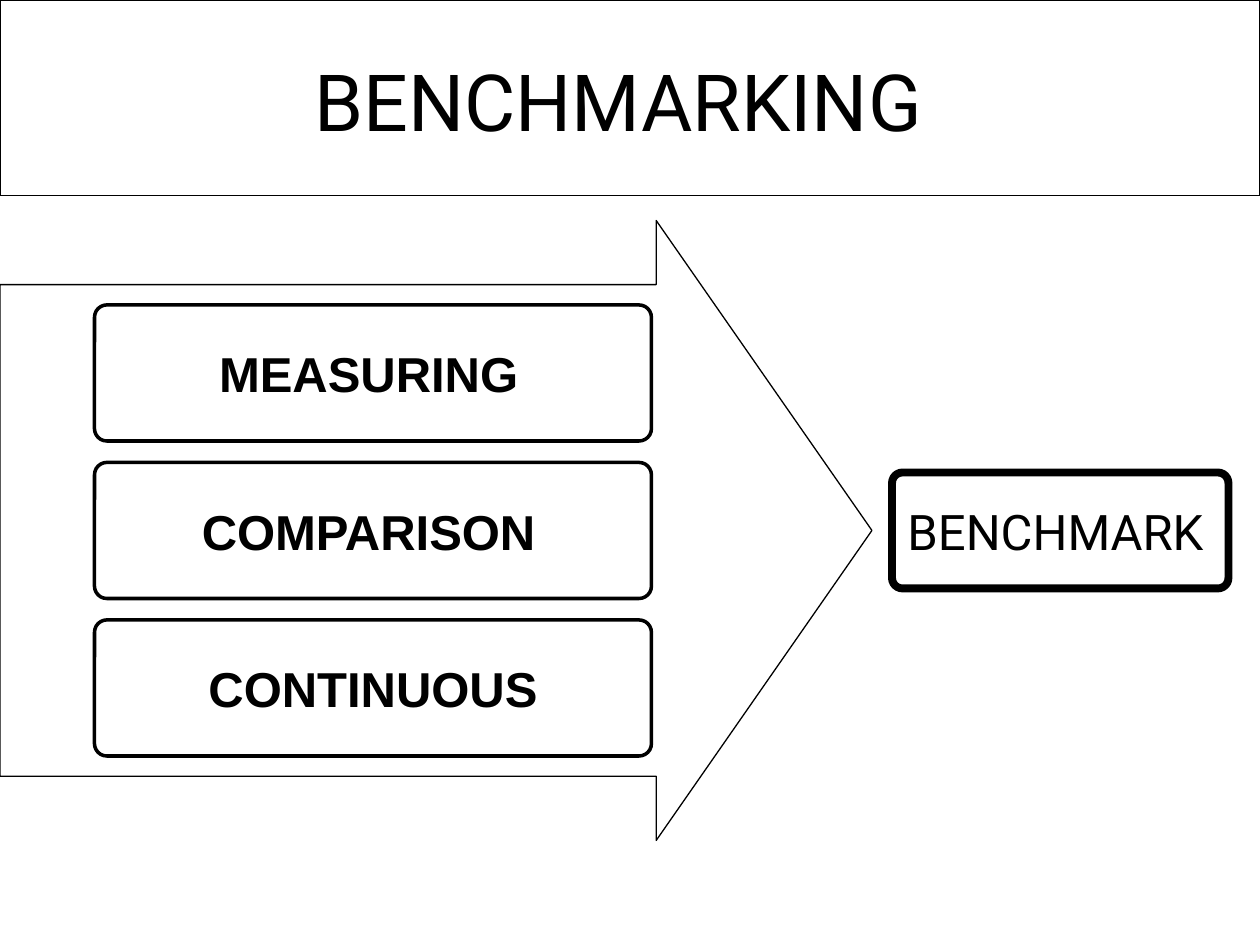
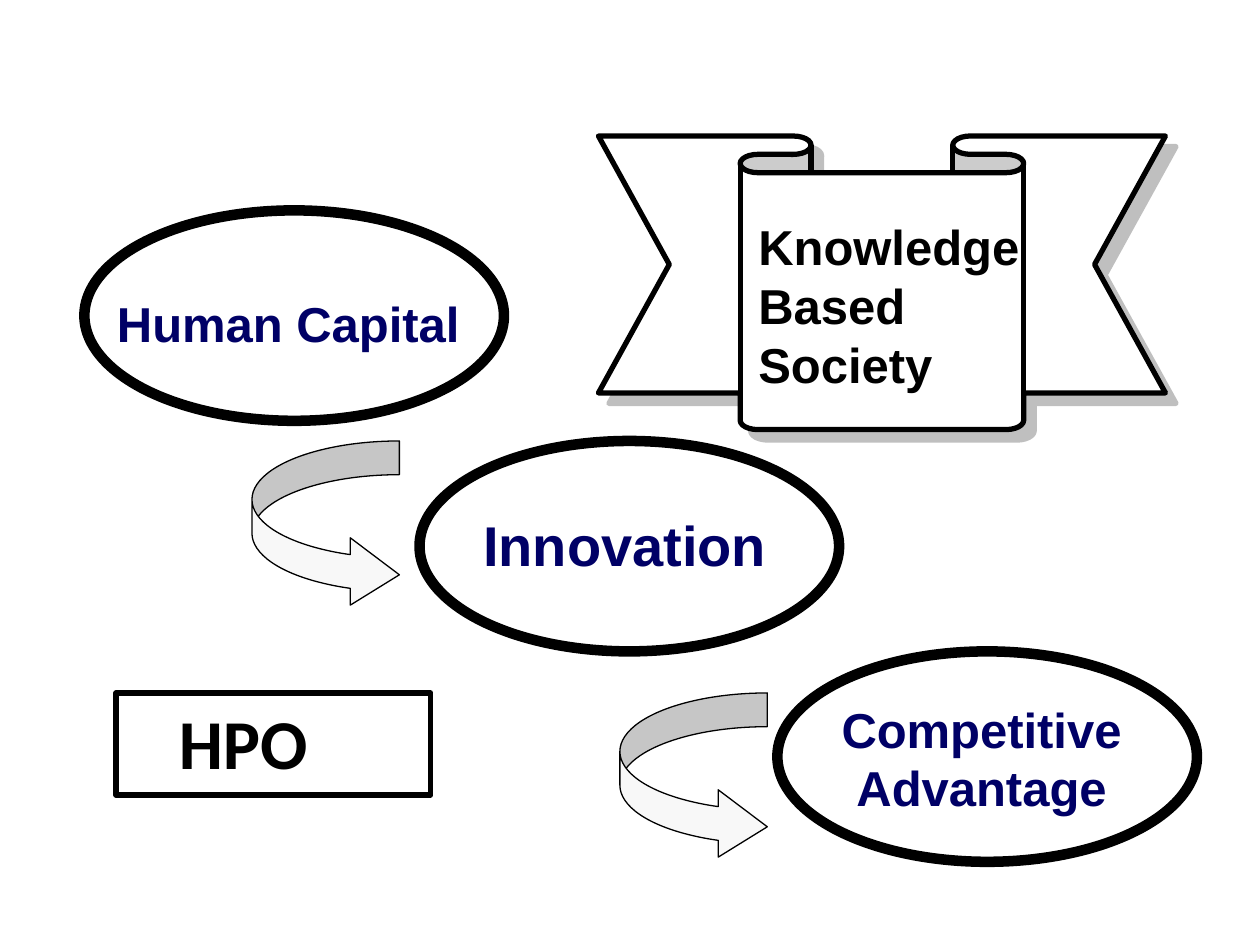
import dataclasses

import lxml.etree
import pptx
import pptx.dml.color
import pptx.enum.shapes
import pptx.enum.text
import pptx.oxml.ns
import pptx.util

Inches = pptx.util.Inches
Pt = pptx.util.Pt
Kind = pptx.enum.shapes.MSO_SHAPE
Align = pptx.enum.text.PP_ALIGN
Anchor = pptx.enum.text.MSO_ANCHOR

BLACK, WHITE, NAVY = "000000", "FFFFFF", "000066"
PALE, GREY = "F8F8F8", "808080"
FONT, TITLE_FONT, HPO_FONT = "Arial", "Roboto", "Calibri"
ROUND = (0.091,)
CURVE = (0.229, 0.457, 0.333)
OVAL = (3.33, 1.67)


@dataclasses.dataclass
class Box:
    left: float
    top: float
    width: float
    height: float

    def place(self) -> tuple:
        return tuple(Inches(v) for v in (self.left, self.top, self.width, self.height))


@dataclasses.dataclass
class Stage:
    """An oval with its label box."""
    left: float
    top: float
    text: str
    label: Box
    size: int = 28
    tail: int = 0
    align: Align = Align.CENTER


STAGES = [
    Stage(0.67, 1.67, "Human Capital", Box(0.83, 2, 3.42, 0.9), tail=48, align=Align.LEFT),
    Stage(3.33, 3.5, "Innovation", Box(3.67, 4, 2.58, 0.63), size=32),
    Stage(6.17, 5.17, "Competitive Advantage", Box(6.5, 5.5, 2.58, 1.03)),
]


def color(value: str) -> pptx.dml.color.RGBColor:
    return pptx.dml.color.RGBColor.from_string(value)


def paint(shape, fill: str = WHITE, width: float = 0.75) -> None:
    shape.fill.solid()
    shape.fill.fore_color.rgb = color(fill)
    shape.line.color.rgb = color(BLACK)
    shape.line.width = Pt(width)


def draw(slide, kind: Kind, box: Box, fill: str = WHITE, width: float = 0.75, adj: tuple = ()):
    shape = slide.shapes.add_shape(kind, *box.place())
    shape.shadow.inherit = False
    paint(shape, fill, width)
    for i, value in enumerate(adj):
        shape.adjustments[i] = value
    return shape


def write(shape, text: str, size: int = 28, font: str = FONT, ink: str = BLACK,
          bold: bool = True, align: Align = Align.LEFT, anchor: Anchor = Anchor.TOP,
          wrap: bool = True, tail: int = 0, lead: bool = True) -> None:
    """Fill a shape with one paragraph; tail is the size of a closing space."""
    frame = shape.text_frame
    frame.word_wrap = wrap
    frame.vertical_anchor = anchor
    para = frame.paragraphs[0]
    para.alignment = align
    if lead:
        para.space_before = Pt(max(size, tail) / 10)
    parts = [(text, size, font)] + ([(" ", tail, FONT)] if tail else [])
    for words, points, face in parts:
        run = para.add_run()
        run.text = words
        run.font.size = Pt(points)
        run.font.name = face
        run.font.bold = bold
        run.font.color.rgb = color(ink)


def label(slide, box: Box, text: str, **style) -> None:
    write(slide.shapes.add_textbox(*box.place()), text, **style)


def shade(shape, tint: str, alpha: int, dist: float, angle: int) -> None:
    qn = pptx.oxml.ns.qn
    effects = shape.element.spPr.find(qn("a:effectLst"))
    outer = lxml.etree.SubElement(effects, qn("a:outerShdw"), dist=str(Pt(dist)),
                                  dir=str(angle * 60000), algn="ctr", rotWithShape="0")
    tone = lxml.etree.SubElement(outer, qn("a:srgbClr"), val=tint)
    lxml.etree.SubElement(tone, qn("a:alpha"), val=str(alpha * 1000))


def bench(deck) -> None:
    slide = deck.slides.add_slide(deck.slide_layouts[5])
    title = slide.shapes.title
    title.left, title.top, title.width, title.height = Box(0, 0, 10, 1.55).place()
    paint(title)
    write(title, "BENCHMARKING", size=45, font=TITLE_FONT, bold=False, align=Align.CENTER,
          anchor=Anchor.MIDDLE, tail=48, lead=False)

    draw(slide, Kind.RIGHT_ARROW, Box(0, 1.75, 6.92, 4.92), adj=(0.793, 0.348))
    steps = [("MEASURING", 18), ("COMPARISON", 18), ("CONTINUOUS", 0)]
    for i, (text, tail) in enumerate(steps):
        step = draw(slide, Kind.ROUNDED_RECTANGLE, Box(0.75, 2.42 + 1.25 * i, 4.42, 1.08),
                    width=2, adj=ROUND)
        write(step, text, align=Align.CENTER, anchor=Anchor.MIDDLE, wrap=False, tail=tail)
    goal = draw(slide, Kind.ROUNDED_RECTANGLE, Box(7.08, 3.75, 2.67, 0.92), width=4.5, adj=ROUND)
    write(goal, "BENCHMARK", font=TITLE_FONT, bold=False, anchor=Anchor.MIDDLE, tail=24)


def society(deck) -> None:
    slide = deck.slides.add_slide(deck.slide_layouts[6])
    for stage in STAGES:
        draw(slide, Kind.OVAL, Box(stage.left, stage.top, *OVAL), width=6)
        label(slide, stage.label, stage.text, size=stage.size, ink=NAVY,
              align=stage.align, tail=stage.tail)
    for left, top in ((2, 3.5), (4.92, 5.5)):
        draw(slide, Kind.CURVED_RIGHT_ARROW, Box(left, top, 1.17, 1.33), fill=PALE, adj=CURVE)

    plate = draw(slide, Kind.RECTANGLE, Box(0.92, 5.5, 2.5, 0.81), width=3)
    plate.text_frame.margin_left = Inches(0.5)
    write(plate, "HPO", size=40, font=HPO_FONT)

    ribbon = draw(slide, Kind.DOWN_RIBBON, Box(4.75, 1.08, 4.5, 2.33), width=3, adj=(0.125, 0.5))
    shade(ribbon, GREY, alpha=50, dist=8.5, angle=45)
    label(slide, Box(5.92, 1.67, 2.42, 1.5), "Knowledge Based Society")


def main() -> None:
    deck = pptx.Presentation()
    deck.slide_width, deck.slide_height = Inches(10), Inches(7.5)
    bench(deck)
    society(deck)
    deck.save("out.pptx")


if __name__ == "__main__":
    main()
